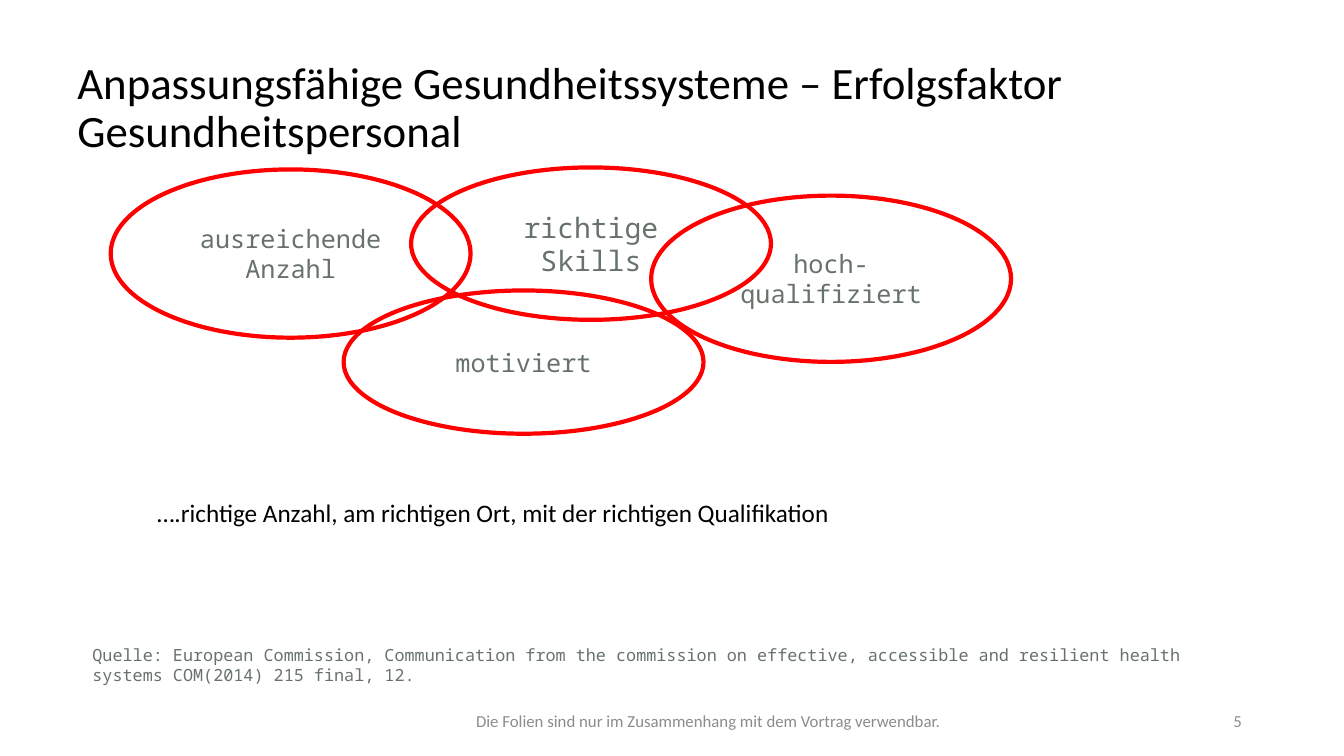
from pptx import Presentation
from pptx.dml.color import RGBColor
from pptx.enum.shapes import MSO_SHAPE
from pptx.enum.text import MSO_ANCHOR, PP_ALIGN
from pptx.util import Cm, Pt

BLACK = RGBColor(0x00, 0x00, 0x00)
GREY = RGBColor(0x8C, 0x8C, 0x8C)
SAGE = RGBColor(0x67, 0x72, 0x6B)
RED = RGBColor(0xFF, 0x00, 0x00)
SANS = "Calibri"
MONO = "Noto Sans Mono"
OVAL_W = 9.07


class Deck:
    """Holds the style and the current slide."""

    def __init__(self):
        self.prs = Presentation()
        self.prs.slide_width = Cm(33.87)
        self.prs.slide_height = Cm(19.05)
        self.slide = self.prs.slides.add_slide(self.prs.slide_layouts[6])

    def label(self, shape, words, size, font, color, align, anchor):
        frame = shape.text_frame
        frame.word_wrap = True
        frame.vertical_anchor = anchor
        para = frame.paragraphs[0]
        para.alignment = align
        run = para.add_run()
        run.text = words
        run.font.size = Pt(size)
        run.font.name = font
        run.font.color.rgb = color
        return para

    def text(self, box, words, size, font=SANS, color=BLACK,
             align=PP_ALIGN.LEFT, anchor=MSO_ANCHOR.TOP):
        shape = self.slide.shapes.add_textbox(*map(Cm, box))
        return self.label(shape, words, size, font, color, align, anchor)

    def oval(self, left, top, height, words, size=18):
        box = map(Cm, (left, top, OVAL_W, height))
        shape = self.slide.shapes.add_shape(MSO_SHAPE.OVAL, *box)
        shape.shadow.inherit = False
        shape.fill.background()
        shape.line.color.rgb = RED
        shape.line.width = Pt(3)
        self.label(shape, words, size, MONO, SAGE,
                   PP_ALIGN.CENTER, MSO_ANCHOR.MIDDLE)


def main():
    deck = Deck()

    # Title
    title = deck.text(
        (1.7, 2.18, 30.48, 1.14),
        "Anpassungsfähige Gesundheitssysteme – Erfolgsfaktor Gesundheitspersonal",
        32, anchor=MSO_ANCHOR.MIDDLE)
    title.line_spacing = 0.9

    # Page number, source and footer
    deck.text((23.93, 17.65, 7.62, 1.02), "5", 12, color=GREY,
              align=PP_ALIGN.RIGHT, anchor=MSO_ANCHOR.MIDDLE)
    deck.text(
        (2.08, 16.13, 29.87, 1.27),
        "Quelle: European Commission, Communication from the commission on "
        "effective, accessible and resilient health systems "
        "COM(2014) 215 final, 12.",
        12, MONO, SAGE)
    deck.text((7.06, 17.65, 21.59, 1.02),
              "Die Folien sind nur im Zusammenhang mit dem Vortrag verwendbar.",
              12, color=GREY, align=PP_ALIGN.CENTER, anchor=MSO_ANCHOR.MIDDLE)

    # Overlapping success factors
    deck.oval(2.79, 4.27, 4.24, "ausreichende Anzahl")
    deck.oval(10.36, 4.22, 3.84, "richtige Skills", 20)
    deck.oval(16.41, 4.93, 4.19, "hoch-qualifiziert")
    deck.oval(8.66, 7.32, 3.61, "motiviert")

    # Summary line
    deck.text(
        (3.71, 12.4, 18.01, 1.02),
        "….richtige Anzahl, am richtigen Ort, mit der richtigen Qualifikation",
        18)

    deck.prs.save("out.pptx")


if __name__ == "__main__":
    main()
